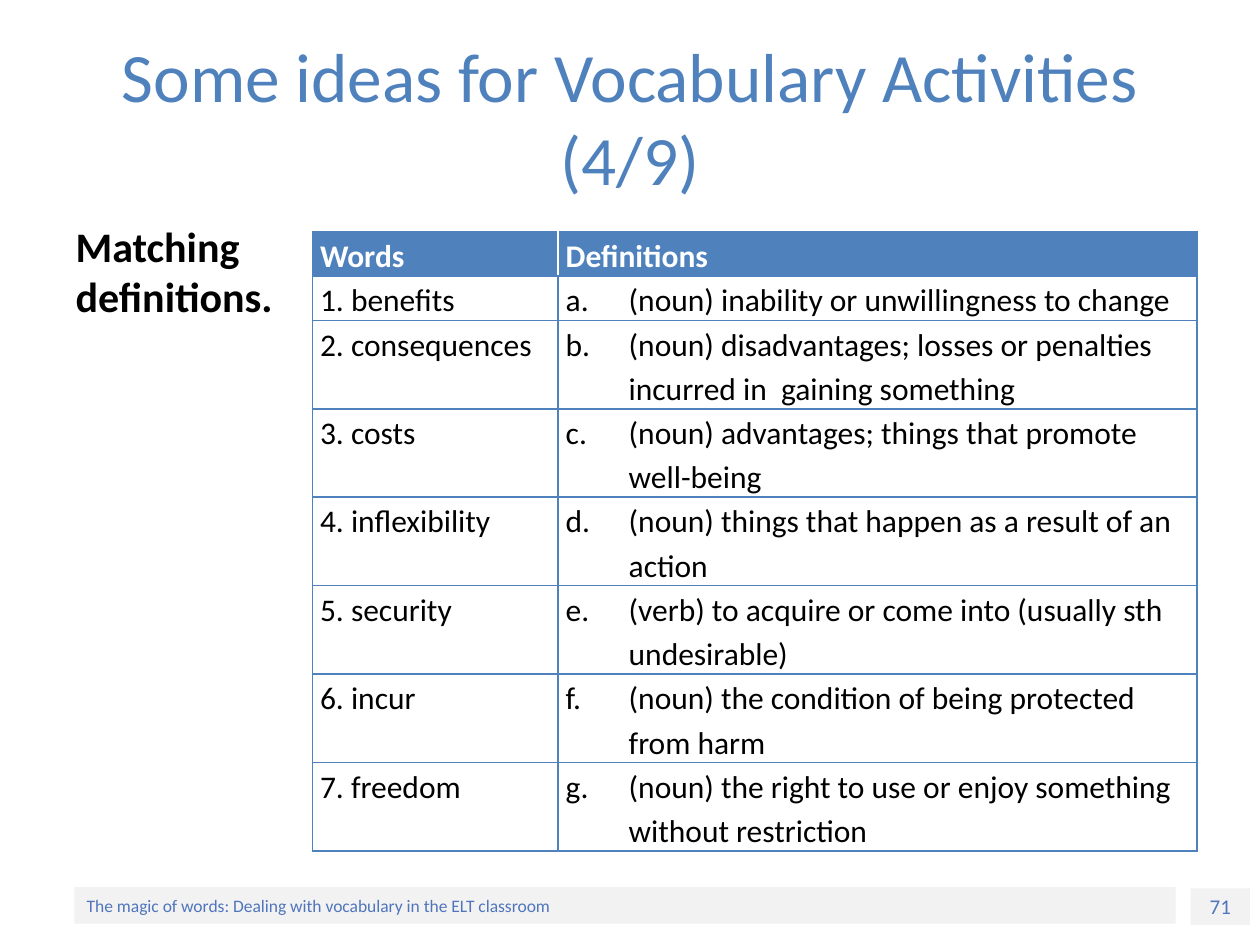
from lxml.etree import SubElement
from pptx import Presentation
from pptx.dml.color import RGBColor
from pptx.enum.shapes import MSO_SHAPE as Shape
from pptx.enum.text import MSO_ANCHOR as Anchor, MSO_AUTO_SIZE as AutoSize, PP_ALIGN as Align
from pptx.oxml.ns import qn
from pptx.util import Emu, Inches, Pt

COLORS = {"blue": "4F81BD", "footer": "5075BC", "band": "F2F2F2",
          "white": "FFFFFF", "black": "000000"}

MATCHES = [
    ("benefits", "(noun) inability or unwillingness to change"),
    ("consequences", "(noun) disadvantages; losses or penalties incurred in  gaining something"),
    ("costs", "(noun) advantages; things that promote well-being"),
    ("inflexibility", "(noun) things that happen as a result of an action"),
    ("security", "(verb) to acquire or come into (usually sth undesirable)"),
    ("incur", "(noun) the condition of being protected from harm"),
    ("freedom", "(noun) the right to use or enjoy something without restriction"),
]


class Deck:
    font = "Calibri"

    def __init__(self, width, height):
        self.prs = Presentation()
        self.prs.slide_width, self.prs.slide_height = Inches(width), Inches(height)
        self.slide = self.prs.slides.add_slide(self.prs.slide_layouts[1])

    def box(self, left, top, width, height):
        column, row = self.prs.slide_width / 100, self.prs.slide_height / 100
        return [Emu(round(n)) for n in (left * column, top * row, width * column, height * row)]

    def set_text(self, frame, text, size, color, bold=False, align=Align.LEFT):
        frame.text = text
        frame.word_wrap = True
        paragraph = frame.paragraphs[0]
        paragraph.alignment = align
        paragraph.space_before = Pt(0)
        for run in paragraph.runs:
            run.font.name, run.font.size, run.font.bold = self.font, Pt(size), bold
            run.font.color.rgb = RGBColor.from_string(COLORS[color])
        return paragraph

    def place(self, holder, area, text, size, color, **look):
        holder.left, holder.top, holder.width, holder.height = self.box(*area)
        holder.text_frame.auto_size = AutoSize.NONE
        return self.set_text(holder.text_frame, text, size, color, **look)

    def title(self, area, text):
        self.place(self.slide.shapes.title, area, text, 39.6, "blue", align=Align.CENTER)
        self.slide.shapes.title.text_frame.vertical_anchor = Anchor.MIDDLE

    def body(self, area, text):
        paragraph = self.place(self.slide.placeholders[1], area, text, 24, "black", bold=True)
        self.indent(paragraph, 0, 0)
        SubElement(paragraph._p.get_or_add_pPr(), qn("a:buNone"))

    def band(self, area, text, size, align=Align.LEFT):
        band = self.slide.shapes.add_shape(Shape.RECTANGLE, *self.box(*area))
        band.shadow.inherit = False
        band.fill.solid()
        band.fill.fore_color.rgb = RGBColor.from_string(COLORS["band"])
        band.line.fill.background()
        band.text_frame.vertical_anchor = Anchor.MIDDLE
        self.set_text(band.text_frame, text, size, "footer", align=align)

    def indent(self, paragraph, left, first):
        properties = paragraph._p.get_or_add_pPr()
        properties.set("marL", str(Inches(left)))
        properties.set("indent", str(Inches(first)))

    def letter(self, paragraph, start):
        self.indent(paragraph, 0.5, -0.5)
        SubElement(paragraph._p.get_or_add_pPr(), qn("a:buAutoNum"),
                   type="alphaLcPeriod", startAt=str(start))

    def cell(self, cell, text, fill, color, bold, borders):
        properties = cell._tc.get_or_add_tcPr()
        for side, border in zip("LRTB", borders):
            line = SubElement(properties, qn(f"a:ln{side}"), w=str(Pt(1)))
            SubElement(SubElement(line, qn("a:solidFill")), qn("a:srgbClr"), val=COLORS[border])
        cell.fill.solid()
        cell.fill.fore_color.rgb = RGBColor.from_string(COLORS[fill])
        cell.margin_left = cell.margin_right = Inches(0.06)
        cell.margin_top = cell.margin_bottom = 0
        paragraph = self.set_text(cell.text_frame, text, 18, color, bold=bold)
        paragraph.line_spacing = 1.15
        return paragraph

    def matching_table(self, area, headings, matches, widths, line_height):
        table = self.slide.shapes.add_table(len(matches) + 1, 2, *self.box(*area)).table
        for column, width in zip(table.columns, widths):
            column.width = Inches(width)
        for index, row in enumerate(table.rows):
            row.height = Inches(line_height * (1 if index < 2 else 2))
        divided = (["blue", "white", "blue", "blue"], ["white", "blue", "blue", "blue"])
        for column, heading in enumerate(headings):
            self.cell(table.cell(0, column), heading, "blue", "white", True, divided[column])
        plain = ["white", "black", False, ["blue"] * 4]
        for number, (word, definition) in enumerate(matches, 1):
            self.cell(table.cell(number, 0), f"{number}. {word}", *plain)
            self.letter(self.cell(table.cell(number, 1), definition, *plain), number)


def main():
    deck = Deck(10, 7.5)
    deck.band((94.5, 94, 4.7, 3.87), "71", 12, Align.CENTER)
    deck.band((5.9, 93.87, 87.4, 3.87),
              "The magic of words: Dealing with vocabulary in the ELT classroom", 10)
    deck.matching_table((24.8, 24.53, 70.2, 65.33), ("Words", "Definitions"),
                        MATCHES, (1.95, 5.07), 0.35)
    deck.body((5, 22.67, 18.2, 67.2), "Matching definitions.")
    deck.title((5, 4, 90, 16.67), "Some ideas for Vocabulary Activities (4/9)")
    deck.prs.save("out.pptx")


if __name__ == "__main__":
    main()
